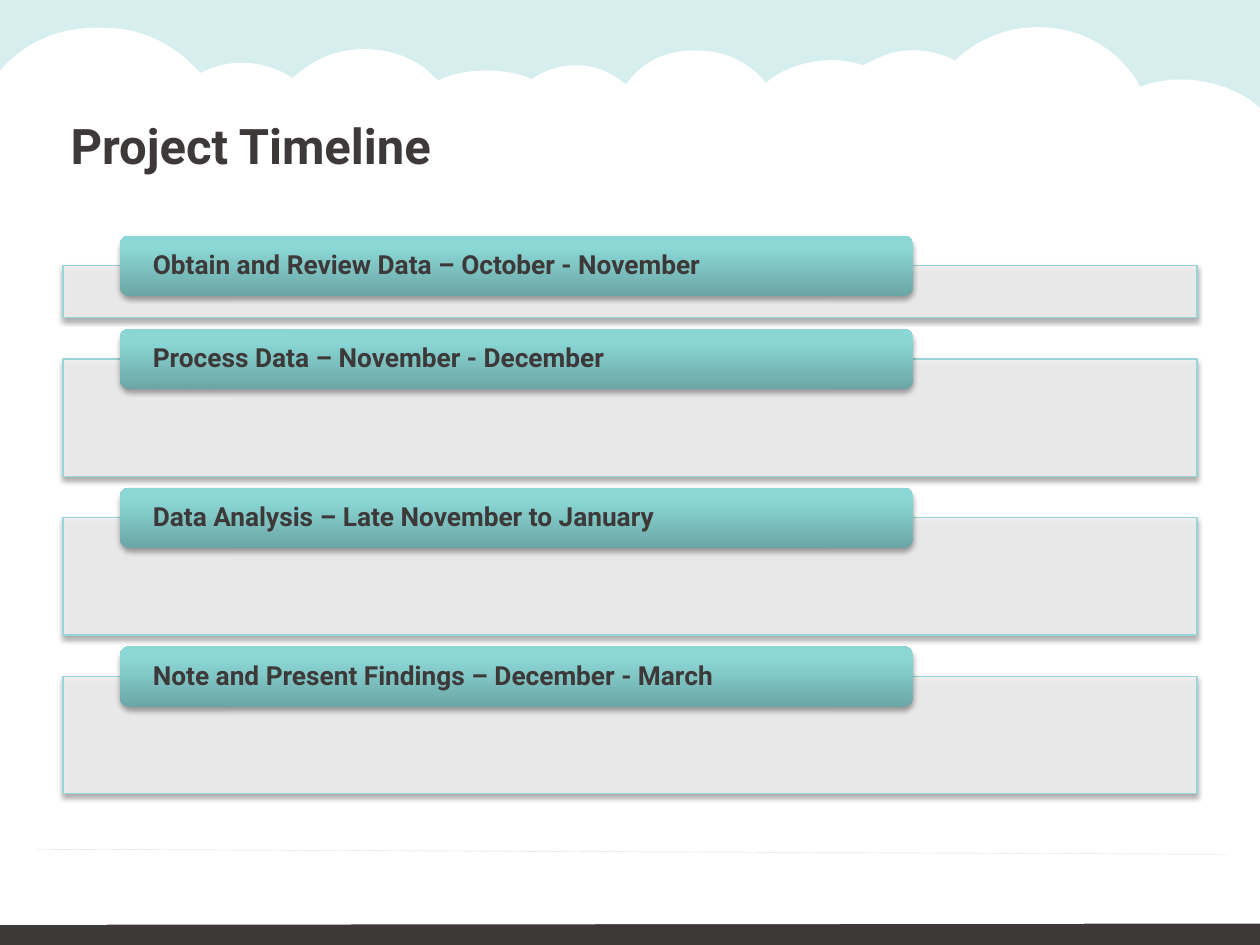
from lxml import etree
from pptx import Presentation
from pptx.dml.color import RGBColor
from pptx.enum.dml import MSO_LINE
from pptx.enum.shapes import MSO_CONNECTOR, MSO_SHAPE
from pptx.enum.text import MSO_ANCHOR, PP_ALIGN
from pptx.oxml import parse_xml
from pptx.oxml.ns import nsdecls, qn
from pptx.util import Inches, Pt

RECT, ROUND_RECT = MSO_SHAPE.RECTANGLE, MSO_SHAPE.ROUNDED_RECTANGLE
STRAIGHT, DASH = MSO_CONNECTOR.STRAIGHT, MSO_LINE.SQUARE_DOT
TOP, MIDDLE, LEFT = MSO_ANCHOR.TOP, MSO_ANCHOR.MIDDLE, PP_ALIGN.LEFT

DARK = RGBColor(0x3D, 0x39, 0x39)
RULE = RGBColor(0x2E, 0x2B, 0x2B)
SKY = RGBColor(0xD6, 0xEE, 0xEE)
WHITE = RGBColor(0xFF, 0xFF, 0xFF)
PALE = RGBColor(0xF0, 0xEF, 0xEF)
TEAL = RGBColor(0x98, 0xD5, 0xD4)
TAB_STOPS = [(0, "6BA6A5"), (80, "8AD7D6"), (100, "8ADAD8")]
FONT = "Roboto"

# Heading and panel height of each phase
PHASES = [
    ("Obtain and Review Data – October - November", 0.41),
    ("Process Data – November - December", 0.93),
    ("Data Analysis – Late November to January", 0.93),
    ("Note and Present Findings – December - March", 0.93),
]

# Upper cloud edge, left to right, in hundredths of an inch:
# two control points and an end point for each curve
CLOUD_START = (0, 56)
CLOUD_CURVES = [
    (18, 36, 43, 21, 81, 22), (118, 22, 142, 39, 159, 58),
    (168, 53, 182, 49, 197, 50), (211, 51, 224, 56, 232, 62),
    (234, 61, 235, 59, 237, 58), (250, 47, 267, 39, 290, 39),
    (310, 39, 326, 46, 337, 54), (341, 57, 344, 61, 348, 64),
    (365, 54, 403, 53, 422, 63), (432, 56, 444, 51, 462, 52),
    (477, 53, 488, 60, 497, 67), (507, 52, 525, 40, 552, 40),
    (578, 40, 596, 51, 608, 66), (623, 51, 659, 42, 685, 52),
    (694, 47, 706, 41, 720, 40), (735, 39, 748, 43, 758, 48),
    (776, 31, 804, 17, 841, 23), (872, 29, 893, 47, 905, 69),
    (939, 55, 983, 68, 1000, 86),
]
PAGE_BOTTOM = [(1000, 733), (0, 734)]


def write(tf, text, size=15, color=DARK, bold=True, anchor=MIDDLE,
          insets=(0.24, 0, 0.24, 0), spacing=None):
    """Fill a text frame with one formatted line."""
    tf.word_wrap = True
    tf.vertical_anchor = anchor
    tf.margin_left, tf.margin_top, tf.margin_right, tf.margin_bottom = map(Inches, insets)
    p = tf.paragraphs[0]
    p.alignment, p.line_spacing = LEFT, spacing
    r = p.add_run()
    r.text = text
    r.font.name, r.font.size, r.font.bold = FONT, Pt(size), bold
    r.font.color.rgb = color


def paint(s, fill, line=None):
    s.shadow.inherit = False
    s.fill.solid()
    s.fill.fore_color.rgb = fill
    if line is None:
        s.line.fill.background()
    else:
        s.line.color.rgb = line
        s.line.width = Pt(0.75)


def add_box(slide, kind, x, y, w, h, fill, line=None):
    s = slide.shapes.add_shape(kind, Inches(x), Inches(y), Inches(w), Inches(h))
    paint(s, fill, line)
    return s


def set_alpha(fill, percent):
    color = fill._xPr.find(".//" + qn("a:srgbClr"))
    etree.SubElement(color, qn("a:alpha")).set("val", str(percent * 1000))


def add_shadow(s):
    effects = s._element.spPr.find(qn("a:effectLst"))
    effects.append(parse_xml(
        f'<a:outerShdw {nsdecls("a")} blurRad="{Pt(3.1)}" dist="{Pt(1.8)}" dir="5400000"'
        ' rotWithShape="0"><a:srgbClr val="000000"><a:alpha val="35000"/>'
        '</a:srgbClr></a:outerShdw>'))


def set_gradient(s, stops):
    """Run the stops from the bottom edge to the top edge."""
    gs = "".join(f'<a:gs pos="{pos * 1000}"><a:srgbClr val="{c}"/></a:gs>'
                 for pos, c in stops)
    old = s._element.spPr.find(qn("a:solidFill"))
    s._element.spPr.replace(old, parse_xml(
        f'<a:gradFill {nsdecls("a")} rotWithShape="1"><a:gsLst>{gs}</a:gsLst>'
        '<a:lin ang="16200000" scaled="0"/></a:gradFill>'))


def add_cloud_page(slide):
    """Draw the white page, then bend its upper segments into curves."""
    ends = [curve[4:] for curve in CLOUD_CURVES]
    fb = slide.shapes.build_freeform(*CLOUD_START, scale=Inches(0.01))
    fb.add_line_segments(ends + PAGE_BOTTOM, close=True)
    s = fb.convert_to_shape()
    paint(s, WHITE)

    top = min(y for _, y in [CLOUD_START] + ends)
    segments = s._element.spPr.findall(".//" + qn("a:lnTo"))
    for segment, curve in zip(segments, CLOUD_CURVES):
        bend = etree.Element(qn("a:cubicBezTo"))
        for x, y in zip(curve[::2], curve[1::2]):
            pt = etree.SubElement(bend, qn("a:pt"))
            pt.set("x", str(x))
            pt.set("y", str(y - top))
        segment.getparent().replace(segment, bend)


def add_rule(slide, x1, y1, x2, y2):
    c = slide.shapes.add_connector(STRAIGHT, Inches(x1), Inches(y1),
                                   Inches(x2), Inches(y2))
    c.line.color.rgb = RULE
    c.line.width = Pt(0.25)
    c.line.dash_style = DASH
    set_alpha(c.line.fill, 17)
    etree.SubElement(c._element.spPr, qn("a:effectLst"))


def add_backdrop(slide):
    slide.background.fill.solid()
    slide.background.fill.fore_color.rgb = DARK
    add_box(slide, RECT, 0, 0, 10, 1.18, SKY)
    add_cloud_page(slide)
    add_rule(slide, 0.28, 6.74, 9.74, 6.78)


def add_title(slide, text):
    s = slide.shapes.title
    s.left, s.top, s.width, s.height = map(Inches, (0.46, 0.88, 6.38, 0.46))
    write(s.text_frame, text, size=28, anchor=TOP, insets=(0.1, 0.04, 0.1, 0))
    slide.shapes._spTree.append(s._element)  # in front of the backdrop


def add_phase(slide, y, height, heading):
    panel = add_box(slide, RECT, 0.5, y, 9, height, PALE, TEAL)
    set_alpha(panel.fill, 90)
    add_shadow(panel)

    # Heading tab over the panel's upper edge
    tab = add_box(slide, ROUND_RECT, 0.95, y - 0.24, 6.3, 0.48, TEAL)
    set_gradient(tab, TAB_STOPS)
    add_shadow(tab)
    write(tab.text_frame, heading, spacing=0.9)


def main():
    prs = Presentation()
    prs.slide_width, prs.slide_height = Inches(10), Inches(7.5)
    slide = prs.slides.add_slide(prs.slide_layouts[5])
    add_backdrop(slide)
    add_title(slide, "Project Timeline")

    # Stacked phases with an equal gap
    y, gap = 2.11, 0.33
    for heading, height in PHASES:
        add_phase(slide, y, height, heading)
        y += height + gap
    prs.save("out.pptx")


if __name__ == "__main__":
    main()
